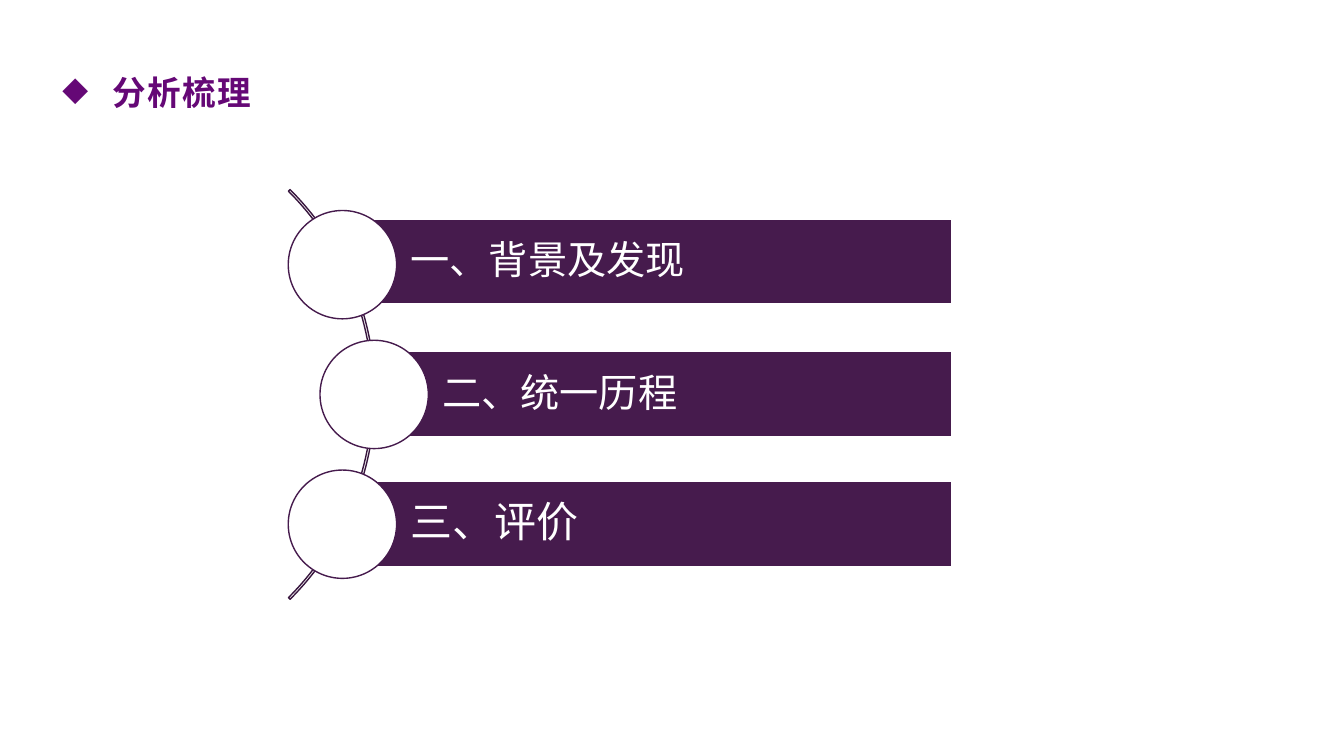
from dataclasses import dataclass

from lxml import etree
from pptx import Presentation
from pptx.dml.color import RGBColor
from pptx.enum.shapes import MSO_SHAPE
from pptx.enum.text import MSO_ANCHOR, MSO_AUTO_SIZE, PP_ALIGN
from pptx.oxml.ns import qn
from pptx.util import Cm, Pt

BLOCK_ARC, BAR, CIRCLE = MSO_SHAPE.BLOCK_ARC, MSO_SHAPE.RECTANGLE, MSO_SHAPE.OVAL
MIDDLE, LEFT, NO_FIT = MSO_ANCHOR.MIDDLE, PP_ALIGN.LEFT, MSO_AUTO_SIZE.NONE

HEADING = "分析梳理"
# label, type size, circle centre x, bar centre y
SECTIONS = [
    ("一、背景及发现", 28, 8.63, 6.59),
    ("二、统一历程", 28, 9.43, 9.94),
    ("三、评价", 30, 8.63, 13.2),
]


@dataclass(frozen=True)
class Theme:
    plum: RGBColor = RGBColor(0x46, 0x1B, 0x4D)
    arc: RGBColor = RGBColor(0x38, 0x16, 0x3E)
    heading: RGBColor = RGBColor(0x65, 0x08, 0x76)
    white: RGBColor = RGBColor(0xFF, 0xFF, 0xFF)
    heading_font: str = "Times New Roman"
    section_font: str = "Arial"
    heading_size: int = 24
    line_width: int = 1


THEME = Theme()
MIDDLE_Y = 9.94
ARC_CENTRE_X, ARC_SIZE = 2.15, 14.6
CIRCLE_SIZE, CIRCLE_PITCH = 2.73, 3.27
BAR_RIGHT, BAR_HEIGHT = 23.98, 2.15


def add_outlined(slide, preset, left, top, width, height, fill, line):
    shape = slide.shapes.add_shape(preset, Cm(left), Cm(top), Cm(width), Cm(height))
    shape.shadow.inherit = False
    if fill is None:
        shape.fill.background()
    else:
        shape.fill.solid()
        shape.fill.fore_color.rgb = fill
    shape.line.color.rgb = line
    shape.line.width = Pt(THEME.line_width)
    return shape


def set_insets(frame, left, top, right, bottom):
    frame.margin_left, frame.margin_top = Cm(left), Cm(top)
    frame.margin_right, frame.margin_bottom = Cm(right), Cm(bottom)


def write(frame, text, font, size, color):
    frame.text = text
    frame.word_wrap = True
    frame.vertical_anchor = MIDDLE
    paragraph = frame.paragraphs[0]
    paragraph.alignment = LEFT
    run = paragraph.runs[0]
    run.font.name = font
    run.font.size = Pt(size)
    run.font.color.rgb = color
    return paragraph, run


def add_heading(slide):
    heading = slide.shapes.title
    heading.left, heading.top = Cm(1.32), Cm(1.35)
    heading.width, heading.height = Cm(5.77), Cm(1.96)
    frame = heading.text_frame
    frame.auto_size = NO_FIT
    set_insets(frame, 0.25, 0.13, 0.25, 0.13)
    paragraph, run = write(
        frame, HEADING, THEME.heading_font, THEME.heading_size, THEME.heading
    )
    run.font.bold = True
    run.font._element.set("spc", "100")
    properties = paragraph._p.get_or_add_pPr()
    properties.set("marL", str(Cm(1.27)))
    properties.set("indent", str(Cm(-1.27)))
    etree.SubElement(properties, qn("a:buChar")).set("char", "◆")


def add_section(slide, index, label, size, centre_x, bar_y):
    bar = add_outlined(
        slide, BAR, centre_x, bar_y - BAR_HEIGHT / 2,
        BAR_RIGHT - centre_x, BAR_HEIGHT, THEME.plum, THEME.white,
    )
    set_insets(bar.text_frame, 1.72, 0.2, 0.2, 0.2)
    paragraph, _ = write(
        bar.text_frame, label, THEME.section_font, size, THEME.white
    )
    paragraph.line_spacing = 0.9
    circle_y = MIDDLE_Y + (index - 1) * CIRCLE_PITCH
    add_outlined(
        slide, CIRCLE, centre_x - CIRCLE_SIZE / 2, circle_y - CIRCLE_SIZE / 2,
        CIRCLE_SIZE, CIRCLE_SIZE, THEME.white, THEME.plum,
    )


def main():
    deck = Presentation()
    deck.slide_width, deck.slide_height = Cm(33.87), Cm(19.05)
    slide = deck.slides.add_slide(deck.slide_layouts[5])
    add_heading(slide)
    arc = add_outlined(
        slide, BLOCK_ARC, ARC_CENTRE_X - ARC_SIZE / 2, MIDDLE_Y - ARC_SIZE / 2,
        ARC_SIZE, ARC_SIZE, None, THEME.arc,
    )
    for position, value in enumerate((189, 27, 0.004)):
        arc.adjustments[position] = value
    for index, section in enumerate(SECTIONS):
        add_section(slide, index, *section)
    deck.save("out.pptx")


if __name__ == "__main__":
    main()
